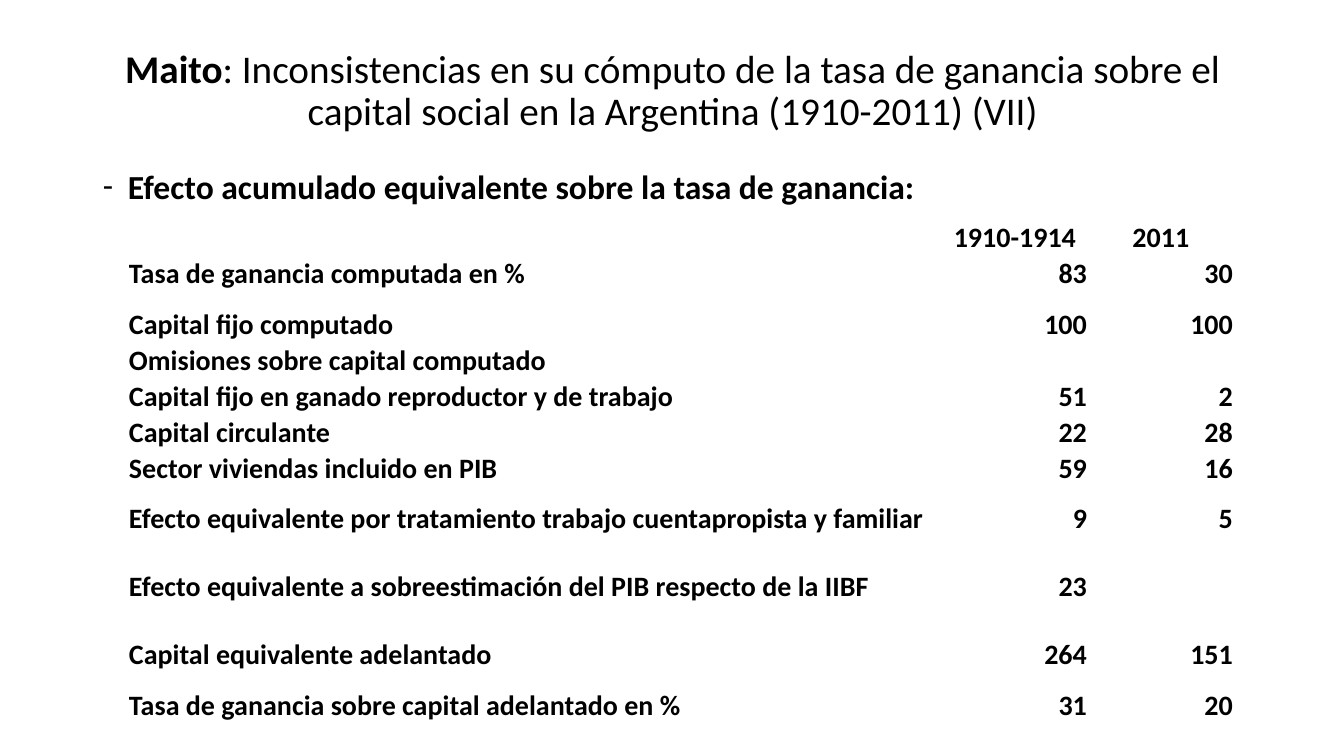
from lxml.etree import SubElement
from pptx import Presentation
from pptx.dml.color import RGBColor
from pptx.enum.text import MSO_ANCHOR, PP_ALIGN
from pptx.oxml.ns import qn
from pptx.util import Pt

TITLE = [
    ("Maito", True),
    (": Inconsistencias en su cómputo de la tasa de ganancia sobre el "
     "capital social en la Argentina (1910-2011) (VII)", False),
]
SUBTITLE = "Efecto acumulado equivalente sobre la tasa de ganancia:"

HEADER_H, ROW_H, GAP, WIDE_GAP = 32, 36, 15, 32
# Row height in px, then the label and the two values; gap rows are empty.
ROWS = [
    (HEADER_H, "", "1910-1914", "2011"),
    (ROW_H, "Tasa de ganancia computada en %", "83", "30"),
    (GAP, "", "", ""),
    (ROW_H, "Capital fijo computado", "100", "100"),
    (ROW_H, "Omisiones sobre capital computado", "", ""),
    (ROW_H, "Capital fijo en ganado reproductor y de trabajo", "51", "2"),
    (ROW_H, "Capital circulante", "22", "28"),
    (ROW_H, "Sector viviendas incluido en PIB", "59", "16"),
    (GAP, "", "", ""),
    (ROW_H, "Efecto equivalente por tratamiento trabajo cuentapropista y familiar", "9", "5"),
    (WIDE_GAP, "", "", ""),
    (ROW_H, "Efecto equivalente a sobreestimación del PIB respecto de la IIBF", "23", ""),
    (WIDE_GAP, "", "", ""),
    (ROW_H, "Capital equivalente adelantado", "264", "151"),
    (GAP, "", "", ""),
    (ROW_H, "Tasa de ganancia sobre capital adelantado en %", "31", "20"),
]
COLUMNS = [814, 146, 146]

BLACK = RGBColor(0, 0, 0)
FONT = "Calibri"
SLIDE_W, SLIDE_H = 1344, 756
MARGIN, TEXT_W = 93, 1159
TABLE_X, TABLE_Y = 128, 220
INDENT = 25


def px(n):
    return round(n * 914400 / 100.8)


def style(r, size, bold=True):
    r.font.name = FONT
    r.font.size = Pt(size)
    r.font.bold = bold
    r.font.color.rgb = BLACK


def add_text(s, y, h, anchor):
    tf = s.shapes.add_textbox(px(MARGIN), px(y), px(TEXT_W), px(h)).text_frame
    tf.word_wrap = True
    tf.vertical_anchor = anchor
    return tf.paragraphs[0]


def add_title(s):
    p = add_text(s, 40, 103, MSO_ANCHOR.MIDDLE)
    p.alignment = PP_ALIGN.CENTER
    p.line_spacing = 0.9
    for text, bold in TITLE:
        r = p.add_run()
        r.text = text
        style(r, 28, bold)


def add_subtitle(s):
    p = add_text(s, 161, 520, MSO_ANCHOR.TOP)
    p.text = SUBTITLE
    p.alignment = PP_ALIGN.JUSTIFY
    style(p.runs[0], 24)
    pPr = p._p.get_or_add_pPr()
    pPr.set("marL", str(px(INDENT)))
    pPr.set("indent", str(px(-INDENT)))
    SubElement(pPr, qn("a:buFont"), typeface=FONT)
    SubElement(pPr, qn("a:buChar"), char="-")


def fill_cell(cell, text, alignment):
    cell.fill.background()
    cell.vertical_anchor = MSO_ANCHOR.BOTTOM
    cell.margin_left = cell.margin_right = cell.margin_top = px(1)
    cell.margin_bottom = 0
    p = cell.text_frame.paragraphs[0]
    if text:
        p.text = text
        p.alignment = alignment
        style(p.runs[0], 20)
    else:
        # A small end mark keeps an empty row from growing.
        SubElement(p._p, qn("a:endParaRPr"), sz="600")


def add_rates_table(s):
    heights = [row[0] for row in ROWS]
    table = s.shapes.add_table(len(ROWS), len(COLUMNS), px(TABLE_X), px(TABLE_Y),
                               px(sum(COLUMNS)), px(sum(heights))).table
    table.first_row = table.horz_banding = False
    for column, width in zip(table.columns, COLUMNS):
        column.width = px(width)
    for i, (height, *texts) in enumerate(ROWS):
        table.rows[i].height = px(height)
        for j, text in enumerate(texts):
            if i == 0:
                alignment = PP_ALIGN.CENTER
            else:
                alignment = PP_ALIGN.RIGHT if j else PP_ALIGN.LEFT
            fill_cell(table.cell(i, j), text, alignment)


def main():
    prs = Presentation()
    prs.slide_width, prs.slide_height = px(SLIDE_W), px(SLIDE_H)
    s = prs.slides.add_slide(prs.slide_layouts[6])
    add_title(s)
    add_subtitle(s)
    add_rates_table(s)
    prs.save("out.pptx")


if __name__ == "__main__":
    main()
